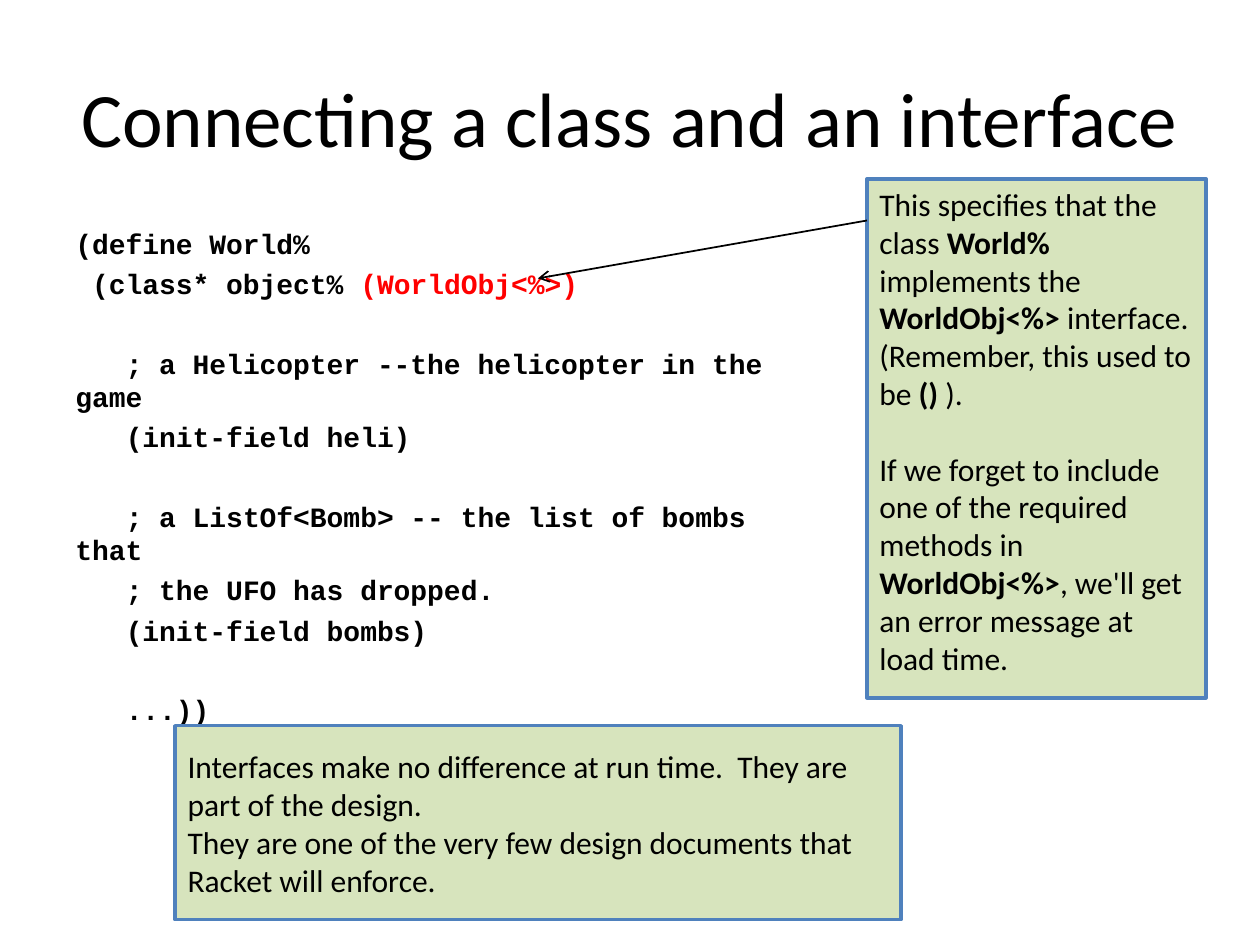
import pptx
import pptx.util
import pptx.dml.color
import pptx.enum.shapes
import pptx.enum.text
import pptx.oxml
import pptx.oxml.ns
from dataclasses import dataclass, field
from typing import Any

Pt = pptx.util.Pt
RGB = pptx.dml.color.RGBColor
Align = pptx.enum.text.PP_ALIGN
Anchor = pptx.enum.text.MSO_ANCHOR
Kind = pptx.enum.shapes.MSO_SHAPE
Line = pptx.enum.shapes.MSO_CONNECTOR


@dataclass(frozen=True)
class Theme:
    ink: RGB = RGB(0, 0, 0)
    red: RGB = RGB(255, 0, 0)
    fill: RGB = RGB(0xD7, 0xE4, 0xBD)
    edge: RGB = RGB(0x4F, 0x81, 0xBD)
    sans: str = "Calibri"
    mono: str = "Courier New"
    title: float = 44
    note: float = 18
    code: float = 16


THEME = Theme()
LEAD = 3.7
SKIP = 26.2
CHAR = 0.6 * THEME.code


@dataclass(frozen=True)
class Run:
    text: str
    bold: bool = False
    color: RGB = THEME.ink


@dataclass(frozen=True)
class Para:
    runs: list[Run]
    before: float = 0
    indent: float = 0


@dataclass(frozen=True)
class Block:
    left: float
    top: float
    width: float
    height: float
    paras: list[Para]
    font: str = THEME.sans
    size: float = THEME.note
    boxed: bool = False
    align: Any = Align.LEFT
    anchor: Any = Anchor.TOP


def code(text: str, chars: int = 0, before: float = LEAD, *more: Run) -> Para:
    return Para([Run(text, True), *more], before, chars * CHAR)


def apply(target: Any, values: dict[str, Any]) -> None:
    for name, value in values.items():
        setattr(target, name, value)


def draw_block(slide: Any, block: Block) -> None:
    place = [Pt(v) for v in (block.left, block.top, block.width, block.height)]
    if block.boxed:
        shape = slide.shapes.add_shape(Kind.RECTANGLE, *place)
        shape.shadow.inherit = False
        shape.fill.solid()
        shape.fill.fore_color.rgb = THEME.fill
        shape.line.color.rgb = THEME.edge
        shape.line.width = Pt(2)
    else:
        shape = slide.shapes.add_textbox(*place)
    frame = shape.text_frame
    apply(frame, {"word_wrap": True, "vertical_anchor": block.anchor})
    for index, para in enumerate(block.paras):
        item = frame.add_paragraph() if index else frame.paragraphs[0]
        apply(item, {"alignment": block.align, "space_before": Pt(para.before)})
        if para.indent:
            item._p.get_or_add_pPr().set("indent", str(Pt(para.indent)))
        for run in para.runs:
            part = item.add_run()
            part.text = run.text
            apply(part.font, {"name": block.font, "size": Pt(block.size), "bold": run.bold})
            part.font.color.rgb = run.color


def draw_arrow(slide: Any, start: tuple[float, float], end: tuple[float, float]) -> None:
    arrow = slide.shapes.add_connector(Line.STRAIGHT, *(Pt(v) for v in start + end))
    arrow.line.color.rgb = THEME.ink
    arrow.line.width = Pt(1)
    space = pptx.oxml.ns.nsdecls("a")
    tip = pptx.oxml.parse_xml(f'<a:tailEnd {space} type="arrow"/>')
    arrow.line._get_or_add_ln().append(tip)
    arrow._element.spPr.append(pptx.oxml.parse_xml(f"<a:effectLst {space}/>"))


TITLE = Block(36, 21.6, 648, 90, [Para([Run("Connecting a class and an interface")])],
              size=THEME.title, align=Align.CENTER, anchor=Anchor.MIDDLE)

CODE = Block(36, 126, 441.4, 356.4, [
    code("(define World%"),
    code("(class* object% ", 1, LEAD, Run("(WorldObj<%>)", True, THEME.red)),
    code("; a Helicopter --the helicopter in the game", 3, SKIP),
    code("(init-field heli)", 3),
    code("; a ListOf<Bomb> -- the list of bombs that", 3, SKIP),
    code("; the UFO has dropped.", 3),
    code("(init-field bombs)", 3),
    code("...))", 3, SKIP),
], font=THEME.mono, size=THEME.code)

SIDE = Block(495.4, 102.2, 193.7, 296.6, [
    Para([Run("This specifies that the class "), Run("World% ", True),
          Run("implements the "), Run("WorldObj<%> ", True), Run("interface.")]),
    Para([Run("(Remember, this used to be "), Run("()", True), Run(" ).")]),
    Para([Run("If we forget to include one of the required methods in "),
          Run("WorldObj<%>", True),
          Run(", we'll get an error message at load time.")], before=21.6),
], boxed=True)

FOOT = Block(100.1, 414.7, 414.7, 110.9, [
    Para([Run("Interfaces make no difference at run time.  They are part of the design.")]),
    Para([Run("They are one of the very few design documents that Racket will enforce.")]),
], boxed=True, anchor=Anchor.MIDDLE)


def main() -> None:
    deck = pptx.Presentation()
    apply(deck, {"slide_width": Pt(720), "slide_height": Pt(540)})
    slide = deck.slides.add_slide(deck.slide_layouts[6])
    for block in (TITLE, CODE, SIDE):
        draw_block(slide, block)
    draw_arrow(slide, (495.4, 126), (307.4, 159.1))
    draw_block(slide, FOOT)
    deck.save("out.pptx")


if __name__ == "__main__":
    main()
